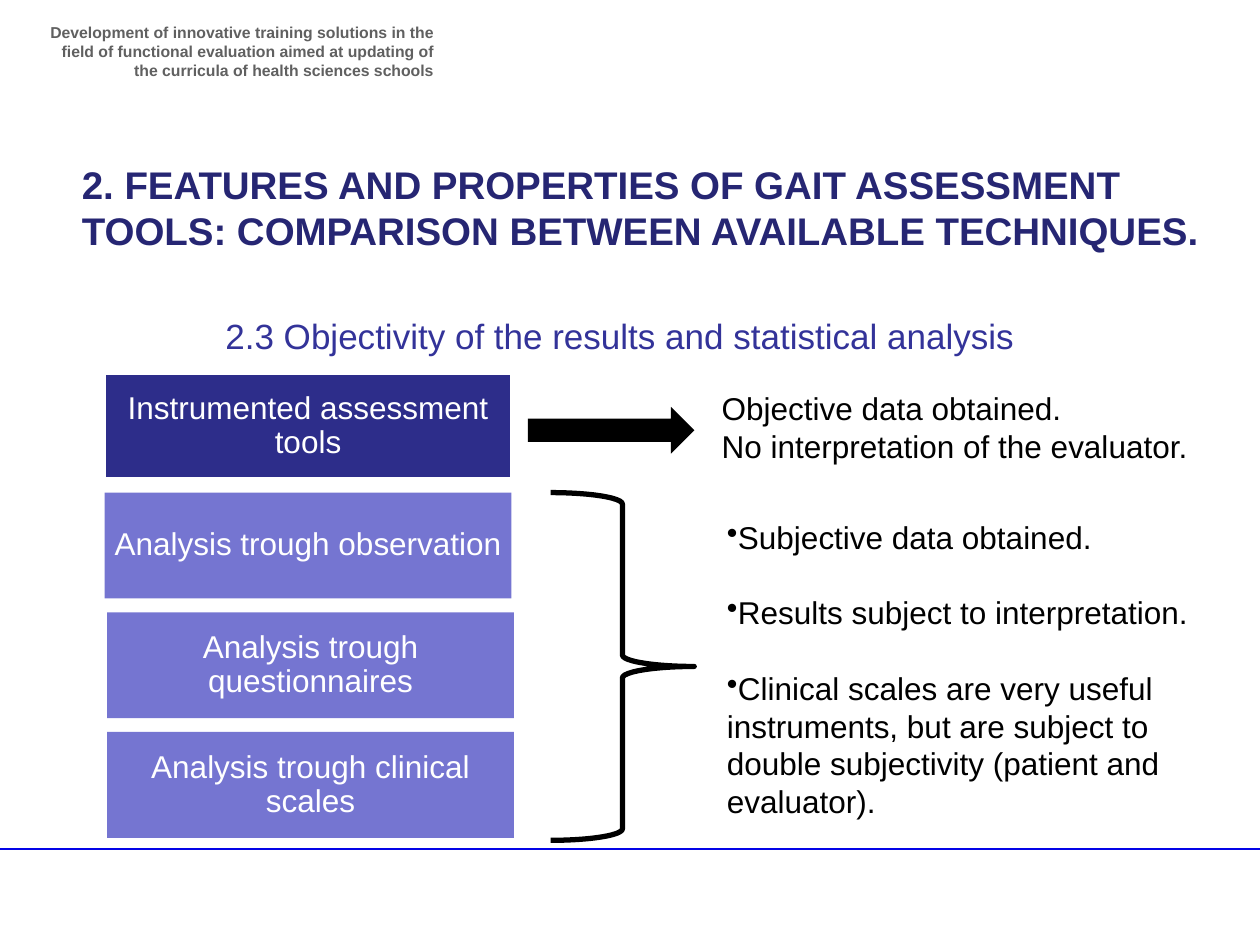
from pptx import Presentation, util as u
from pptx.dml.color import RGBColor
from pptx.enum import shapes, text
from pptx.oxml.ns import qn
from lxml import etree

HEX = {"rule": "0404E6", "head": "606060", "title": "262673", "sub": "333399",
       "dark": "2D2D8A", "light": "7575D1", "white": "FFFFFF", "black": "000000"}
HEAD = ("Development of innovative training solutions in the ﬁeld of functional "
        "evaluation aimed at updating of the curricula of health sciences schools")
TITLE = ("2. FEATURES AND PROPERTIES OF GAIT ASSESSMENT TOOLS: "
         "COMPARISON BETWEEN AVAILABLE TECHNIQUES.")
SUB = "2.3 Objectivity of the results and statistical analysis"
# wording, left edge, fill
TOOLS = [("Instrumented assessment tools", 0.83, "dark"),
         ("Analysis trough observation", 0.83, "light"),
         ("Analysis trough questionnaires", 0.85, "light"),
         ("Analysis trough clinical scales", 0.85, "light")]
FACTS = ["Objective data obtained.", "No interpretation of the evaluator."]
LIMITS = ["Subjective data obtained.", "Results subject to interpretation.",
          "Clinical scales are very useful instruments, but are subject to "
          "double subjectivity (patient and evaluator)."]
TOP, STEP, WIDE, HIGH = 2.96, 0.95, 3.23, 0.84
LEFT, MID = text.PP_ALIGN.LEFT, text.PP_ALIGN.CENTER


def rgb(name):
    return RGBColor.from_string(HEX[name])


def put(shape, at):
    for key, val in zip(("left", "top", "width", "height"), at):
        setattr(shape, key, u.Inches(val))


def write(shape, lines, size, ink, bold=False, align=LEFT, pad=(0.1, 0.05),
          anchor=text.MSO_ANCHOR.TOP, mark=None, **form):
    """Fill the shape with one paragraph per line; mark is a bullet sign."""
    frame = shape.text_frame
    frame.text = "\n".join(lines)
    frame.word_wrap, frame.auto_size = True, text.MSO_AUTO_SIZE.NONE
    frame.vertical_anchor = anchor
    frame.margin_left = frame.margin_right = u.Inches(pad[0])
    frame.margin_top = frame.margin_bottom = u.Inches(pad[1])
    for i, para in enumerate(frame.paragraphs):
        if mark:
            props = para._p.get_or_add_pPr()
            props.set("marL", "0")
            props.set("indent", "0")
            etree.SubElement(props, qn("a:buChar"), char=mark)
        para.alignment = align
        for key, val in form.items():
            if i or key != "space_before":
                setattr(para, key, val)
        look = {"name": "Arial", "size": u.Pt(size), "bold": bold}
        for key, val in look.items():
            setattr(para.font, key, val)
        para.font.color.rgb = rgb(ink)


def draw(slide, kind, at, fill=None, line=None, width=2):
    shape = slide.shapes.add_shape(kind, *map(u.Inches, at))
    shape.shadow.inherit = False
    for part, ink in ((shape.fill, fill), (shape.line.fill, line)):
        if ink:
            part.solid()
            part.fore_color.rgb = rgb(ink)
        else:
            part.background()
    if line:
        shape.line.width = u.Pt(width)
    return shape


def main():
    deck = Presentation()
    deck.slide_width, deck.slide_height = u.Inches(10), u.Inches(7.5)
    slide = deck.slides.add_slide(deck.slide_layouts[5])
    kind = shapes.MSO_SHAPE

    rule = slide.shapes.add_connector(
        shapes.MSO_CONNECTOR.STRAIGHT, *map(u.Inches, (0, 6.74, 10, 6.74)))
    rule.line.color.rgb, rule.line.width = rgb("rule"), u.Pt(1)
    etree.SubElement(rule._element.spPr, qn("a:effectLst"))

    title = slide.shapes.title
    put(title, (0.55, 1.23, 9.09, 0.84))
    write(title, [TITLE], 22, "title", bold=True)

    notes = [((0.28, 0.13, 3.26, 0.47), [HEAD], 9, "head",
              {"bold": True, "align": text.PP_ALIGN.RIGHT}),
             ((1.69, 2.45, 6.61, 0.77), [SUB], 20, "sub", {}),
             ((5.63, 3.04, 4.3, 0.71), FACTS, 18, "black", {}),
             ((5.67, 4.06, 4.29, 2.83), LIMITS, 18, "black",
              {"mark": "•", "space_before": u.Pt(21.6)})]
    for at, lines, size, ink, form in notes:
        box = slide.shapes.add_textbox(*map(u.Inches, at))
        write(box, lines, size, ink, **form)

    for row, (name, left, fill) in enumerate(TOOLS):
        edge = "white" if fill == "dark" else None
        box = draw(slide, kind.RECTANGLE,
                   (left, TOP + row * STEP, WIDE, HIGH), fill, edge)
        write(box, [name], 18, "white", align=MID, pad=(0.01, 0.01),
              anchor=text.MSO_ANCHOR.MIDDLE, line_spacing=0.9)

    draw(slide, kind.RIGHT_ARROW, (4.19, 3.23, 1.32, 0.37), "black")
    brace = draw(slide, kind.RIGHT_BRACE, (4.37, 3.91, 1.14, 2.76),
                 line="black", width=3)
    brace.adjustments[0], brace.adjustments[1] = 0.08, 0.5
    deck.save("out.pptx")


if __name__ == "__main__":
    main()
